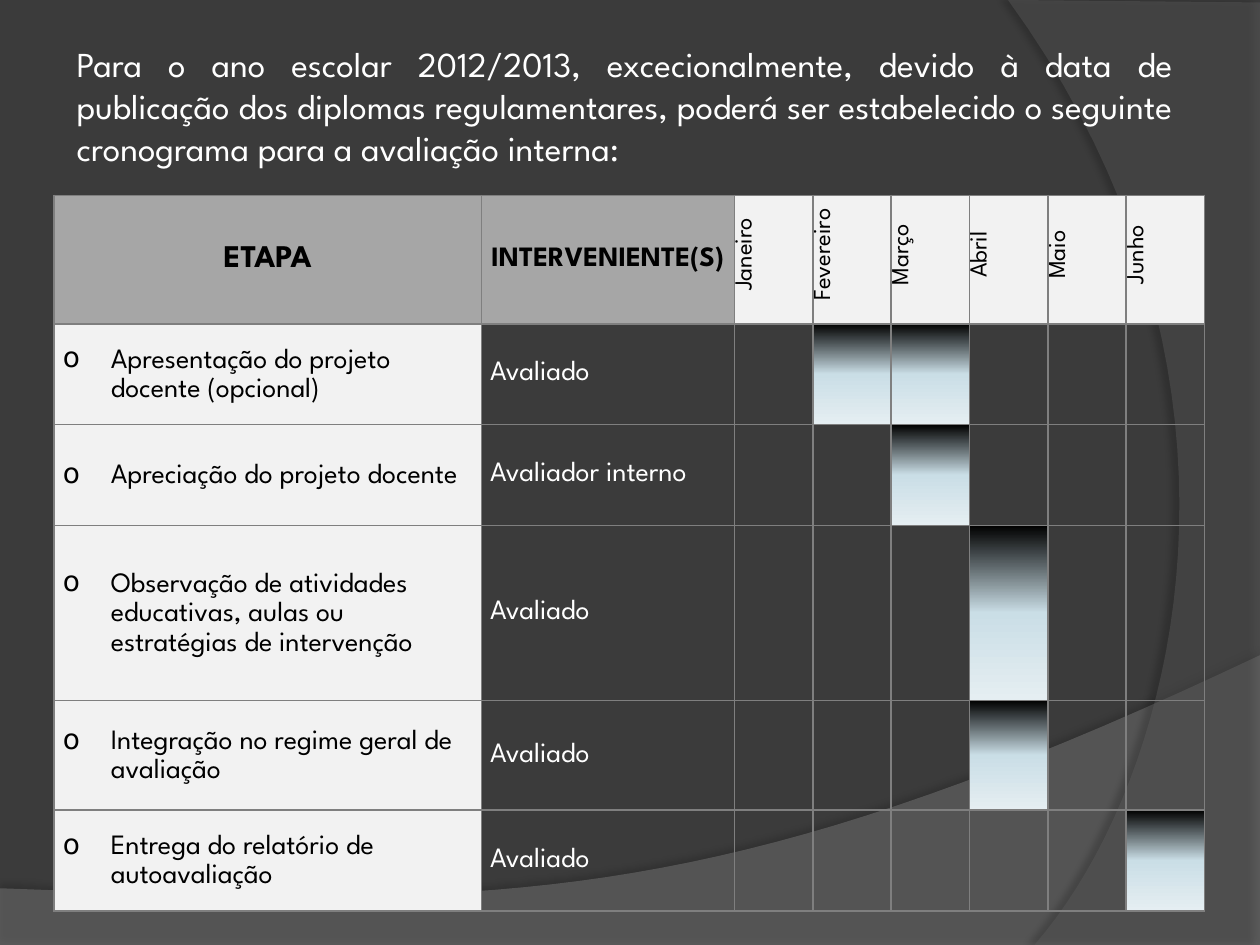
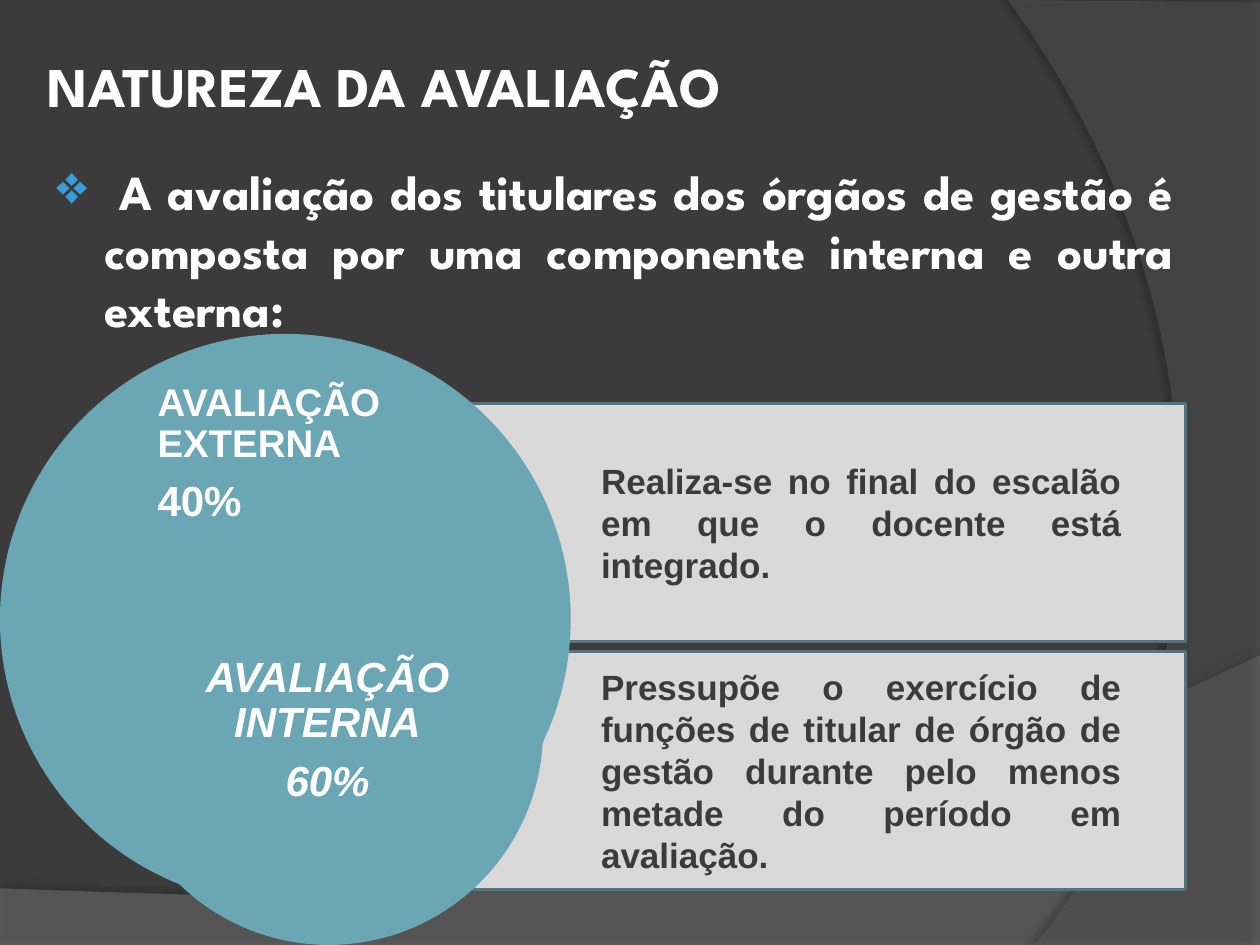
from lxml import etree
from pptx import Presentation
from pptx.dml import color
from pptx.enum import shapes, text
from pptx.oxml import ns
from pptx.util import Inches, Pt

COLORS = {
    "dark": "3B3B3B", "wave": "7F7F7F", "arc": "5E5E5E", "white": "FFFFFF",
    "black": "000000", "grid": "7F7F7F", "head": "A6A6A6", "pale": "F2F2F2",
    "bar": "D9D9D9", "bar_line": "517682", "disc": "6AA6B4", "bullet": "379DDB",
    "mist": "CADEE6", "ice": "E5EEF2",
}
SPARTAN, SANS = "League Spartan", "Arial"
ALIGN, ANCHOR = text.PP_ALIGN, text.MSO_ANCHOR
SIDES = ("left", "top", "right", "bottom")


# ---- Shared helpers ----
def rgb(name):
    return color.RGBColor.from_string(COLORS[name])


def apply(target, values):
    for name, value in values.items():
        setattr(target, name, value)


def node(parent, tag, **values):
    """Append a drawing element with the given attributes."""
    child = etree.SubElement(parent, ns.qn("a:" + tag))
    for name, value in values.items():
        child.set(name, str(value))
    return child


def margins(insets, prefix="margin_"):
    return {prefix + side: Inches(inset) for side, inset in zip(SIDES, insets)}


def write(frame, lines, ink="white", layout=None, hanging=None, bullet=None, **font):
    """Fill a frame with one paragraph for each (text, size) pair."""
    for index, (words, size) in enumerate(lines):
        para = frame.add_paragraph() if index else frame.paragraphs[0]
        apply(para, layout or {})
        span = para.add_run()
        span.text = words
        apply(span.font, {"name": SPARTAN, "size": Pt(size), "bold": False, **font})
        span.font.color.rgb = rgb(ink)
        props = para._p.get_or_add_pPr()
        if hanging:
            props.set("marL", str(Inches(hanging[0])))
            props.set("indent", str(Inches(hanging[1])))
        if bullet:
            char, tint, percent = bullet
            node(node(props, "buClr"), "srgbClr", val=COLORS[tint])
            node(props, "buSzPct", val=percent * 1000)
            node(props, "buChar", char=char)


def add_text(page, box, lines, insets=(0.1, 0.05, 0.1, 0.05), anchor=ANCHOR.TOP, **style):
    frame = page.shapes.add_textbox(*map(Inches, box)).text_frame
    apply(frame, {"word_wrap": True, "vertical_anchor": anchor, **margins(insets)})
    write(frame, lines, **style)


def add_plain_shape(page, kind, box, fill, line=None):
    shape = page.shapes.add_shape(kind, *map(Inches, box))
    shape.shadow.inherit = False
    shape.fill.solid()
    shape.fill.fore_color.rgb = rgb(fill)
    if line:
        shape.line.color.rgb = rgb(line)
        shape.line.width = Pt(1.5)
    else:
        shape.line.fill.background()
    return shape


# ---- Backdrop of every slide ----
def curve(start, pull_1, pull_2, end, steps=40):
    """Points along a cubic curve, without its start."""
    points = []
    for step in range(1, steps + 1):
        t = step / steps
        weights = ((1 - t) ** 3, 3 * t * (1 - t) ** 2, 3 * t * t * (1 - t), t ** 3)
        points.append(tuple(sum(w * p[axis] for w, p in zip(weights, (start, pull_1, pull_2, end)))
                            for axis in (0, 1)))
    return points


def add_sweep(page, points, fill, opacity, shade, distance, angle):
    corners = [(Inches(x), Inches(y)) for x, y in points]
    builder = page.shapes.build_freeform(*corners[0], scale=1.0)
    builder.add_line_segments(corners[1:], close=True)
    shape = builder.convert_to_shape()
    shape.fill.solid()
    shape.fill.fore_color.rgb = rgb(fill)
    shape.line.fill.background()
    shape.shadow.inherit = False
    props = shape._element.spPr
    node(props.find(ns.qn("a:solidFill"))[0], "alpha", val=opacity * 1000)
    shadow = node(props.find(ns.qn("a:effectLst")), "outerShdw", blurRad=Pt(4),
                  dist=Pt(distance), dir=angle * 60000, algn="ctr", rotWithShape=0)
    node(node(shadow, "srgbClr", val=COLORS["black"]), "alpha", val=shade * 1000)


def add_page(deck):
    page = deck.slides.add_slide(deck.slide_layouts[6])
    page.background.fill.solid()
    page.background.fill.fore_color.rgb = rgb("dark")
    wave = [(0, 7.05), (0, 7.51), (10, 7.51), (10, 5.2)]
    wave += curve(wave[-1], (5.59, 7.29), (3.91, 7.19), wave[0])
    add_sweep(page, wave, "wave", 45, 35, 3.5, 270)
    arc = [(10, 0.02), (10, 7.5), (8.21, 7.5)]
    arc += curve(arc[-1], (9.35, 6.19), (10.18, 3), (8, 0))
    add_sweep(page, arc, "arc", 40, 45, 4, 180)
    return page


# ---- Schedule table ----
MONTHS = ["Janeiro", "Fevereiro", "Março", "Abril", "Maio", "Junho"]
STAGES = [  # stage, who takes part, active months, row height
    ("Apresentação do projeto docente (opcional)", "Avaliado", ("Fevereiro", "Março"), 0.8),
    ("Apreciação do projeto docente", "Avaliador interno", ("Março",), 0.8),
    ("Observação de atividades educativas, aulas ou estratégias de intervenção",
     "Avaliado", ("Abril",), 1.39),
    ("Integração no regime geral de avaliação", "Avaliado", ("Abril",), 0.87),
    ("Entrega do relatório de autoavaliação", "Avaliado", ("Junho",), 0.8),
]


def style_cell(cell, fill=None):
    apply(cell, {"vertical_anchor": ANCHOR.MIDDLE, **margins((0.07, 0, 0.07, 0))})
    props = cell._tc.get_or_add_tcPr()
    for side in ("lnL", "lnR", "lnT", "lnB"):
        border = node(props, side, w=Pt(1))
        node(node(border, "solidFill"), "srgbClr", val=COLORS["grid"])
    if fill == "active":
        gradient = node(props, "gradFill", rotWithShape=1)
        stops = node(gradient, "gsLst")
        for place, tint in ((0, "black"), (50, "mist"), (100, "ice")):
            node(node(stops, "gs", pos=place * 1000), "srgbClr", val=COLORS[tint])
        node(gradient, "lin", ang=90 * 60000, scaled=0)
    elif fill:
        cell.fill.solid()
        cell.fill.fore_color.rgb = rgb(fill)
    else:
        cell.fill.background()


def add_schedule(page, box):
    heights = [1.02] + [stage[-1] for stage in STAGES]
    widths = [3.39, 2.01] + [(box[2] - 5.4) / len(MONTHS)] * len(MONTHS)
    table = page.shapes.add_table(len(heights), len(widths), *map(Inches, box)).table
    apply(table, {"first_row": False, "horz_banding": False})
    for column, width in zip(table.columns, widths):
        column.width = Inches(width)
    for row, height in zip(table.rows, heights):
        row.height = Inches(height)

    # Header row
    centred = {"alignment": ALIGN.CENTER}
    for index, (title, size) in enumerate([("ETAPA", 18), ("INTERVENIENTE(S)", 16)]):
        cell = table.cell(0, index)
        style_cell(cell, "head")
        write(cell.text_frame, [(title, size)], "black", centred, bold=True)
    for index, month in enumerate(MONTHS, 2):
        cell = table.cell(0, index)
        style_cell(cell, "pale")
        cell._tc.get_or_add_tcPr().set("vert", "vert270")
        write(cell.text_frame, [(month, 14)], "black", centred, hanging=(0.08, 0))

    # One row for each stage
    for row, (stage, actor, active, _) in enumerate(STAGES, 1):
        cells = list(table.rows[row].cells)
        style_cell(cells[0], "pale")
        write(cells[0].text_frame, [(stage, 16)], "black", {"line_spacing": 1.15},
              hanging=(0.38, -0.38), bullet=("o", "black", 100))
        style_cell(cells[1])
        write(cells[1].text_frame, [(actor, 16)])
        for month, cell in zip(MONTHS, cells[2:]):
            style_cell(cell, "active" if month in active else None)


def build_schedule_page(deck):
    page = add_page(deck)
    add_text(page, (0.51, 0.29, 8.9, 1.11), [(
        "Para o ano escolar 2012/2013, excecionalmente, devido à data de publicação dos "
        "diplomas regulamentares, poderá ser estabelecido o seguinte cronograma para a "
        "avaliação interna:", 20)], layout={"alignment": ALIGN.JUSTIFY})
    add_schedule(page, (0.43, 1.55, 9.13, 5.69))


# ---- Components of the evaluation ----
def add_bar(page, box, words):
    bar = add_plain_shape(page, shapes.MSO_SHAPE.PENTAGON, box, "bar", "bar_line")
    bar.adjustments[0] = 0
    apply(bar.text_frame, {"word_wrap": True, "vertical_anchor": ANCHOR.MIDDLE,
                           **margins((1.97, 0.05, 0.51, 0.05))})
    write(bar.text_frame, [(words, 20)], "dark", {"alignment": ALIGN.JUSTIFY},
          name=SANS, bold=True)


def add_disc(page, box, label_box, lines, inset, anchor, align, italic):
    """A disc with a label placed relative to its corner."""
    left, top, size = box
    add_plain_shape(page, shapes.MSO_SHAPE.OVAL, (left, top, size, size), "disc")
    right, down, width, height = label_box
    layout = {"alignment": align, "line_spacing": 0.9, "space_after": Pt(8)}
    add_text(page, (left + right, top + down, width, height), lines, (inset,) * 4, anchor,
             layout=layout, name=SANS, bold=True, italic=italic)


def build_nature_page(deck):
    page = add_page(deck)
    bars = ["Realiza-se no final do escalão em que o docente está integrado.",
            "Pressupõe o exercício de funções de titular de órgão de gestão durante pelo "
            "menos metade do período em avaliação."]
    for index, words in enumerate(bars):
        add_bar(page, (2.8, 3.2 + 1.97 * index, 6.61, 1.89), words)

    # Title and statement
    add_text(page, (0.28, 0.36, 8.27, 0.64), [("NATUREZA DA AVALIAÇÃO", 32)], bold=True)
    add_text(page, (0.35, 1.23, 9.06, 1.51), [(
        " A avaliação dos titulares dos órgãos de gestão é composta por uma componente "
        "interna e outra externa:", 28)],
        layout={"alignment": ALIGN.JUSTIFY, "space_before": Pt(5.6)},
        hanging=(0.38, -0.38), bullet=("❖", "bullet", 111), bold=True)

    # Discs with their weights
    add_disc(page, (0, 2.65, 4.53), (1.08, 0.22, 2.38, 1.5),
             [("AVALIAÇÃO EXTERNA", 22), ("40%", 24)], 0.17, ANCHOR.TOP, ALIGN.LEFT, False)
    add_disc(page, (0.91, 4.1, 3.4), (0.49, 0.85, 2.4, 1.7),
             [("AVALIAÇÃO INTERNA", 24), ("60%", 24)], 0.19, ANCHOR.MIDDLE, ALIGN.CENTER, True)


def main():
    deck = Presentation()
    apply(deck, {"slide_width": Inches(10), "slide_height": Inches(7.5)})
    build_schedule_page(deck)
    build_nature_page(deck)
    deck.save("out.pptx")


if __name__ == "__main__":
    main()
